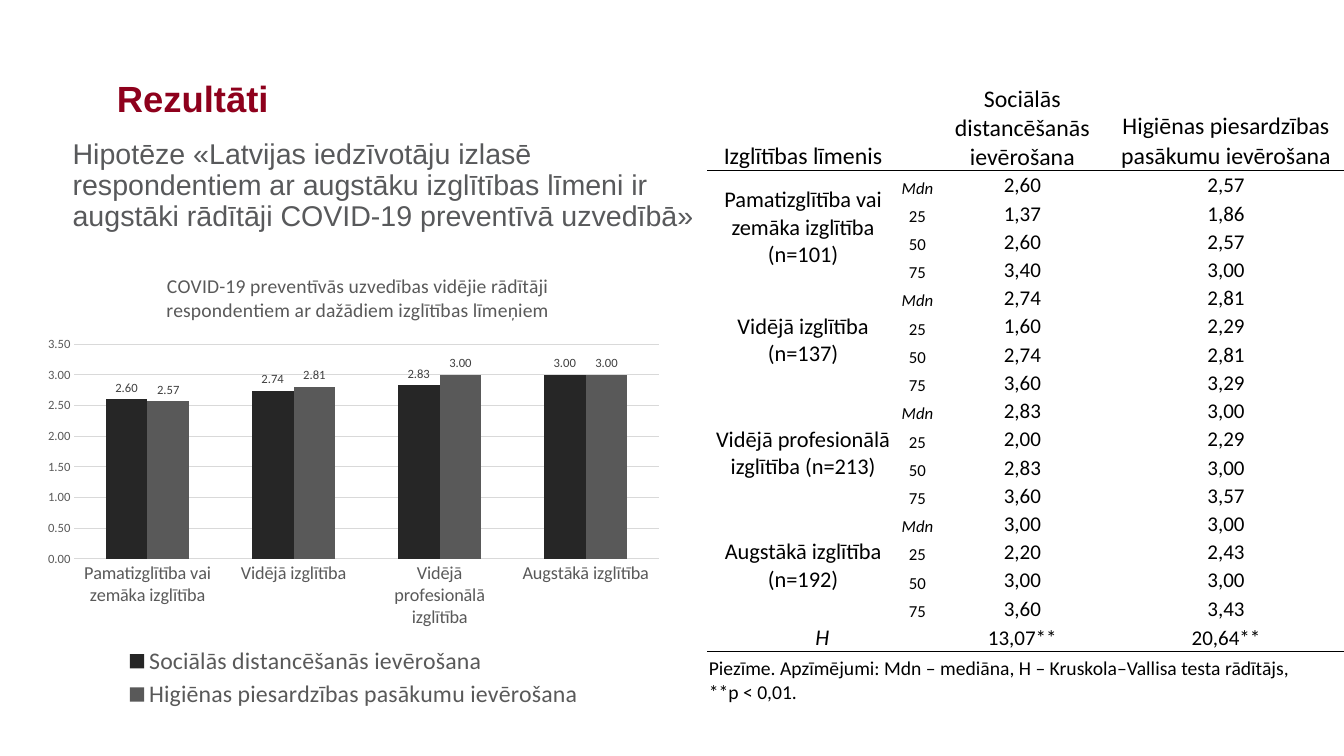
from lxml import etree
from pptx import Presentation
from pptx.chart.data import CategoryChartData
from pptx.dml.color import RGBColor
from pptx.enum.chart import XL_CHART_TYPE, XL_LABEL_POSITION, XL_LEGEND_POSITION, XL_TICK_MARK
from pptx.enum.text import MSO_ANCHOR, PP_ALIGN
from pptx.oxml import parse_xml
from pptx.oxml.ns import nsdecls, qn
from pptx.util import Inches, Pt

COLUMNS = XL_CHART_TYPE.COLUMN_CLUSTERED
OUTSIDE = XL_LABEL_POSITION.OUTSIDE_END
LEGEND_BOTTOM = XL_LEGEND_POSITION.BOTTOM
NO_TICK = XL_TICK_MARK.NONE
TOP, MIDDLE, BOTTOM = MSO_ANCHOR.TOP, MSO_ANCHOR.MIDDLE, MSO_ANCHOR.BOTTOM
LEFT, CENTER = PP_ALIGN.LEFT, PP_ALIGN.CENTER

COLORS = {"title": "8E001C", "body": "58595B", "text": "000000", "chart_text": "595959",
          "label": "404040", "grid": "D9D9D9", "distancing": "262626", "hygiene": "595959"}

DISTANCING = "Sociālās distancēšanās ievērošana"
HYGIENE = "Higiēnas piesardzības pasākumu ievērošana"
CHART_TITLE = ("COVID-19 preventīvās uzvedības vidējie rādītāji\v"
               "respondentiem ar dažādiem izglītības līmeņiem")
CATEGORIES = ["Pamatizglītība vai zemāka izglītība", "Vidējā izglītība",
              "Vidējā profesionālā izglītība", "Augstākā izglītība"]
SERIES = [(DISTANCING, (2.6, 2.74, 2.83, 3), "distancing"),
          (HYGIENE, (2.57, 2.81, 3, 3), "hygiene")]

MEASURES = ["Mdn", "25", "50", "75"]
GROUP_SIZES = [101, 137, 213, 192]
GROUP_VALUES = [
    [("2,60", "2,57"), ("1,37", "1,86"), ("2,60", "2,57"), ("3,40", "3,00")],
    [("2,74", "2,81"), ("1,60", "2,29"), ("2,74", "2,81"), ("3,60", "3,29")],
    [("2,83", "3,00"), ("2,00", "2,29"), ("2,83", "3,00"), ("3,60", "3,57")],
    [("3,00", "3,00"), ("2,20", "2,43"), ("3,00", "3,00"), ("3,60", "3,43")],
]
NOTE = ("Piezīme. Apzīmējumi: Mdn – mediāna, H – Kruskola–Vallisa testa rādītājs,\v"
        "**p < 0,01.")
COL_WIDTHS = [1.89, 0.38, 1.7, 2.34]
ROW_HEIGHTS = [0.25, 0.84] + [0.28] * 16 + [0.29, 0.53]
HEADER_ROW, FIRST_ROW, H_ROW, NOTE_ROW = 1, 2, 18, 19


def rgb(name):
    return RGBColor.from_string(COLORS[name])


def set_font(font, name, size, color, bold=False, italic=False):
    font.name, font.size = name, Pt(size)
    font.bold, font.italic = bold, italic
    font.color.rgb = rgb(color)


def set_layout(element, x, y, w=None, h=None, inner=False):
    """Place a chart part by fractions of the chart area."""
    for old in element.findall(qn("c:layout")):
        element.remove(old)
    sizes = [("x", x), ("y", y), ("w", w), ("h", h)]
    target = '<c:layoutTarget val="inner"/>' if inner else ""
    modes = "".join(f'<c:{k}Mode val="edge"/>' for k in "xy")
    values = "".join(f'<c:{k} val="{v}"/>' for k, v in sizes if v is not None)
    layout = parse_xml(f'<c:layout {nsdecls("c")}><c:manualLayout>{target}{modes}{values}'
                       '</c:manualLayout></c:layout>')
    before = element.find(qn("c:tx"))
    if before is None:
        before = element.find(qn("c:legendPos"))
    if before is None:
        element.insert(0, layout)
    else:
        before.addnext(layout)


def set_border(cell, side):
    """Draw a thin black line on side "T" or "B" of a cell."""
    tc_pr = cell._tc.get_or_add_tcPr()
    line = etree.Element(qn(f"a:ln{side}"), w=str(Pt(0.5)))
    fill = etree.SubElement(line, qn("a:solidFill"))
    etree.SubElement(fill, qn("a:srgbClr"), val=COLORS["text"])
    tc_pr.insert(0, line)


class Deck:
    def __init__(self):
        self.prs = Presentation()
        self.prs.slide_width, self.prs.slide_height = Inches(13.33), Inches(7.5)
        self.s = self.prs.slides.add_slide(self.prs.slide_layouts[5])

    def fill_text(self, sp, box, text, size, color, bold=False):
        sp.left, sp.top, sp.width, sp.height = map(Inches, box)
        tf = sp.text_frame
        tf.word_wrap, tf.vertical_anchor = True, TOP
        tf.margin_left = tf.margin_right = tf.margin_top = tf.margin_bottom = 0
        p = tf.paragraphs[0]
        p.text, p.alignment, p.line_spacing = text, LEFT, 0.9
        set_font(p.font, "Arial", size, color, bold)

    def title(self, box, text):
        self.fill_text(self.s.shapes.title, box, text, 26, "title", bold=True)

    def text(self, box, text):
        sp = self.s.shapes.add_textbox(*map(Inches, box))
        self.fill_text(sp, box, text, 20.4, "body")

    def chart(self, box):
        data = CategoryChartData(number_format="0.00")
        data.categories = CATEGORIES
        for name, values, _ in SERIES:
            data.add_series(name, values)
        chart = self.s.shapes.add_chart(COLUMNS, *map(Inches, box), data).chart
        set_font(chart.font, "Calibri", 10, "text")

        chart.has_title = True
        p = chart.chart_title.text_frame.paragraphs[0]
        p.text = CHART_TITLE
        set_font(p.font, "Calibri", 14, "chart_text")
        chart.has_legend = True
        chart.legend.position, chart.legend.include_in_layout = LEGEND_BOTTOM, False
        set_font(chart.legend.font, "Calibri", 17, "chart_text")

        for axis, size in ((chart.category_axis, 13), (chart.value_axis, 9)):
            axis.major_tick_mark = axis.minor_tick_mark = NO_TICK
            axis.format.line.fill.background()
            set_font(axis.tick_labels.font, "Calibri", size, "chart_text")
        axis = chart.value_axis
        axis.minimum_scale, axis.maximum_scale, axis.major_unit = 0, 3.5, 0.5
        axis.tick_labels.number_format = "0.00"
        axis.tick_labels.number_format_is_linked = False
        grid = axis.major_gridlines.format.line
        grid.width, grid.color.rgb = Pt(0.75), rgb("grid")

        plot = chart.plots[0]
        plot.gap_width, plot.overlap, plot.vary_by_categories = 150, 0, False
        for series, (_, _, color) in zip(plot.series, SERIES):
            series.format.fill.solid()
            series.format.fill.fore_color.rgb = rgb(color)
            labels = series.data_labels
            labels.show_value, labels.position = True, OUTSIDE
            labels.number_format, labels.number_format_is_linked = "0.00", False
            set_font(labels.font, "Calibri", 9, "label")

        area = chart._chartSpace.chart
        set_layout(area.find(qn("c:title")), 0.2, 0.04)
        set_layout(area.plotArea, 0.06, 0.2, 0.92, 0.46, inner=True)
        set_layout(area.find(qn("c:legend")), 0.13, 0.84, 0.74, 0.15)

    def cell(self, cell, text, size, anchor=BOTTOM, align=CENTER, italic=False):
        cell.vertical_anchor = anchor
        p = cell.text_frame.paragraphs[0]
        p.text, p.alignment = text, align
        set_font(p.font, "Calibri", size, "text", italic=italic)

    def table(self, box):
        shape = self.s.shapes.add_table(len(ROW_HEIGHTS), len(COL_WIDTHS), *map(Inches, box))
        table = shape.table
        table.first_row = table.horz_banding = False
        for column, width in zip(table.columns, COL_WIDTHS):
            column.width = Inches(width)
        for row, height in zip(table.rows, ROW_HEIGHTS):
            row.height = Inches(height)
        for cell in table.iter_cells():
            cell.fill.background()
            cell.margin_left = cell.margin_right = cell.margin_top = Inches(0.01)
            cell.margin_bottom = 0
            self.cell(cell, "", 12)

        for col, text in ((0, "Izglītības līmenis"), (2, DISTANCING), (3, HYGIENE)):
            self.cell(table.cell(HEADER_ROW, col), text, 17)
        for i, (name, n, values) in enumerate(zip(CATEGORIES, GROUP_SIZES, GROUP_VALUES)):
            top = FIRST_ROW + i * len(MEASURES)
            table.cell(top, 0).merge(table.cell(top + len(MEASURES) - 1, 0))
            self.cell(table.cell(top, 0), f"{name} (n={n})", 16, MIDDLE)
            for row, (measure, pair) in enumerate(zip(MEASURES, values), top):
                self.cell(table.cell(row, 1), measure, 12, italic=measure == "Mdn")
                for col, value in enumerate(pair, 2):
                    self.cell(table.cell(row, col), value, 15)

        for row, first, last in ((0, 2, 3), (H_ROW, 0, 1), (NOTE_ROW, 0, 3)):
            table.cell(row, first).merge(table.cell(row, last))
        self.cell(table.cell(H_ROW, 0), "H", 16, italic=True)
        for col, value in ((2, "13,07**"), (3, "20,64**")):
            self.cell(table.cell(H_ROW, col), value, 15)
        self.cell(table.cell(NOTE_ROW, 0), NOTE, 14, align=LEFT)
        for row, side in ((HEADER_ROW, "B"), (FIRST_ROW, "T"), (H_ROW, "B"), (NOTE_ROW, "T")):
            for col in range(len(COL_WIDTHS)):
                set_border(table.cell(row, col), side)


def main():
    deck = Deck()
    deck.title((1.16, 0.8, 11.02, 1.02), "Rezultāti")
    deck.text((0.72, 1.39, 6.21, 1.11),
              "Hipotēze «Latvijas iedzīvotāju izlasē respondentiem ar augstāku izglītības "
              "līmeni ir augstāki rādītāji COVID-19 preventīvā uzvedībā»")
    deck.chart((0.36, 2.49, 6.3, 4.63))
    deck.table((7.02, 0.58, 6.3, 6.34))
    deck.prs.save("out.pptx")


if __name__ == "__main__":
    main()
